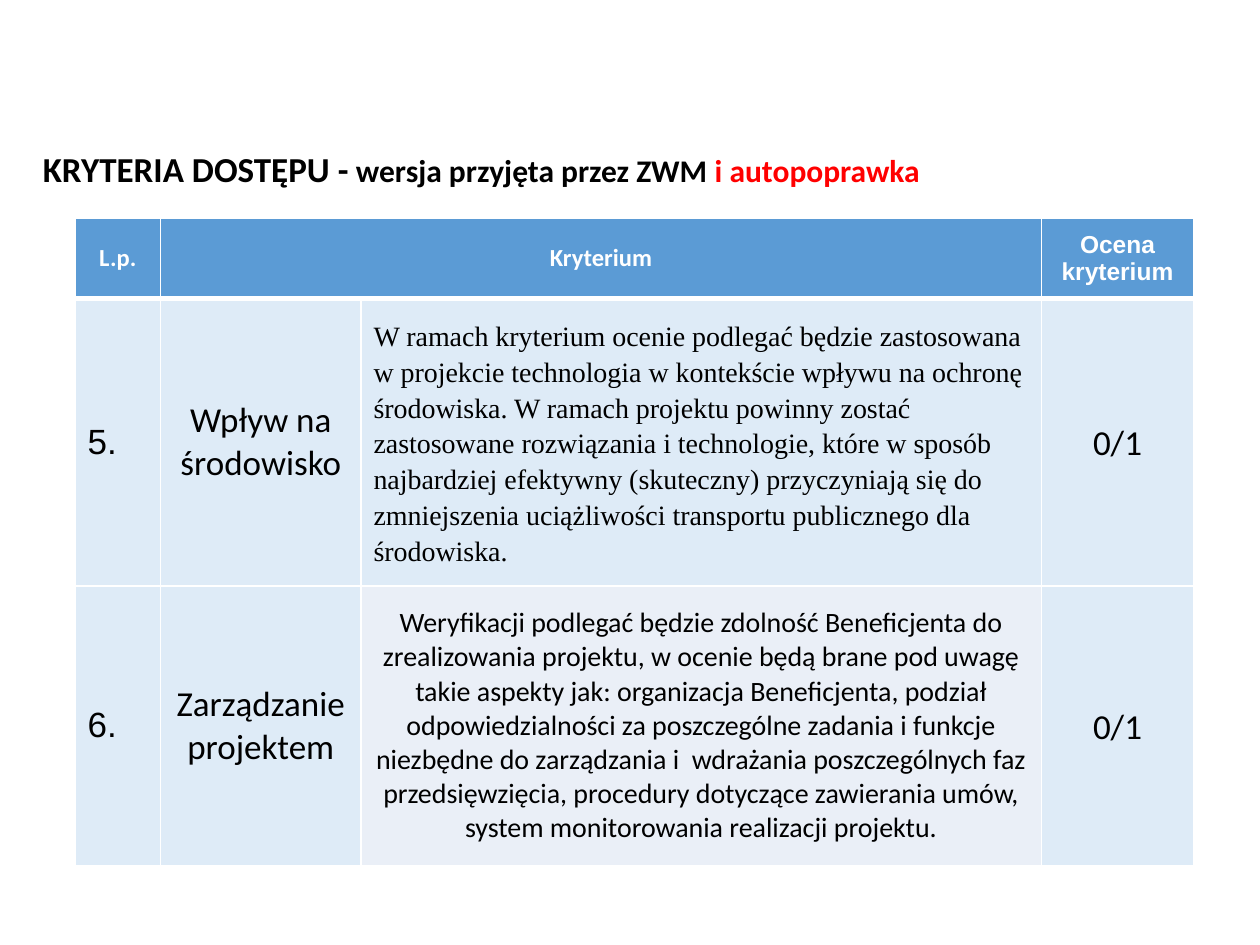
from lxml import etree
from pptx import Presentation
from pptx.dml.color import RGBColor
from pptx.enum.text import MSO_ANCHOR, MSO_AUTO_SIZE, PP_ALIGN
from pptx.oxml.ns import qn
from pptx.util import Inches, Pt

LEFT, CENTER = PP_ALIGN.LEFT, PP_ALIGN.CENTER
MIDDLE = MSO_ANCHOR.MIDDLE
FIT_SHAPE = MSO_AUTO_SIZE.SHAPE_TO_FIT_TEXT
TITLE_ONLY = 5
UNIT = 0.1  # grid step in inches: 100 columns by 75 rows
WHITE, BLACK, RED = "FFFFFF", "000000", "FF0000"
BLUE, PALE, PALER = "5B9BD5", "DEEBF7", "EAEFF7"
SANS, ARIAL, SERIF = "Calibri", "Arial", "Times New Roman"


def rgb(color):
    return RGBColor.from_string(color)


def grid(steps):
    return Inches(steps * UNIT)


class Deck:
    def __init__(self):
        self.prs = Presentation()
        self.prs.slide_width, self.prs.slide_height = grid(100), grid(75)
        self.s = self.prs.slides.add_slide(self.prs.slide_layouts[TITLE_ONLY])

    def style(self, r, size, color=BLACK, bold=False, font=SANS):
        r.font.name, r.font.size, r.font.bold = font, Pt(size), bold
        r.font.color.rgb = rgb(color)

    def title(self, x, y, w, h, runs):
        sp = self.s.shapes.title
        sp.left, sp.top, sp.width, sp.height = map(grid, (x, y, w, h))
        tf = sp.text_frame
        tf.word_wrap, tf.auto_size, tf.vertical_anchor = True, FIT_SHAPE, MIDDLE
        p = tf.paragraphs[0]
        p.alignment = LEFT
        for text, size, color in runs:
            r = p.add_run()
            r.text = text
            self.style(r, size, color, bold=True)

    def table(self, x, y, cols, rows):
        frame = self.s.shapes.add_table(len(rows), len(cols), grid(x), grid(y),
                                        grid(sum(cols)), grid(sum(rows)))
        table = frame.table
        for column, width in zip(table.columns, cols):
            column.width = grid(width)
        for row, height in zip(table.rows, rows):
            row.height = grid(height)
        return table

    def borders(self, cell, top=1, bottom=1):
        tcPr = cell._tc.get_or_add_tcPr()
        for side, width in (("L", 1), ("R", 1), ("T", top), ("B", bottom)):
            ln = etree.SubElement(tcPr, qn(f"a:ln{side}"), w=str(Pt(width)))
            fill = etree.SubElement(ln, qn("a:solidFill"))
            etree.SubElement(fill, qn("a:srgbClr"), val=WHITE)

    def cell(self, cell, text, fill, size, color=BLACK, bold=False, font=SANS,
             align=CENTER, spacing=None, margin=None):
        cell.fill.solid()
        cell.fill.fore_color.rgb = rgb(fill)
        cell.vertical_anchor = MIDDLE
        if margin is not None:
            cell.margin_left = cell.margin_right = Inches(margin)
            cell.margin_top = cell.margin_bottom = Inches(margin)
        p = cell.text_frame.paragraphs[0]
        p.text = text
        p.alignment, p.line_spacing = align, spacing
        self.style(p.runs[0], size, color, bold, font)


HEADERS = [(0, "L.p.", SANS), (1, "Kryterium", SANS), (3, "Ocena kryterium", ARIAL)]

# Number, criterion, description, description style, score
CRITERIA = [
    ("5.", "Wpływ na środowisko",
     "W ramach kryterium ocenie podlegać będzie zastosowana w projekcie "
     "technologia w kontekście wpływu na ochronę środowiska. W ramach projektu "
     "powinny zostać zastosowane rozwiązania i technologie, które w sposób "
     "najbardziej efektywny (skuteczny) przyczyniają się do zmniejszenia "
     "uciążliwości transportu publicznego dla środowiska.",
     dict(fill=PALE, font=SERIF, align=LEFT, spacing=1.15), "0/1"),
    ("6.", "Zarządzanie projektem",
     "Weryfikacji podlegać będzie zdolność Beneficjenta do zrealizowania "
     "projektu, w ocenie będą brane pod uwagę takie aspekty jak: organizacja "
     "Beneficjenta, podział odpowiedzialności za poszczególne zadania i funkcje "
     "niezbędne do zarządzania i  wdrażania poszczególnych faz przedsięwzięcia, "
     "procedury dotyczące zawierania umów, system monitorowania realizacji "
     "projektu.",
     dict(fill=PALER), "0/1"),
]


def main():
    deck = Deck()

    # Title
    deck.title(2.4, 10.5, 86.2, 5.7, [
        ("KRYTERIA DOSTĘPU -", 20, BLACK),
        (" wersja przyjęta przez ZWM ", 18, BLACK),
        ("i autopoprawka", 18, RED),
    ])

    # Table with a thick line under its header
    table = deck.table(5.95, 17.3, [6.8, 15.9, 54, 12.1], [6.4, 22.8, 22.2])
    for i, row in enumerate(table.rows):
        for cell in row.cells:
            deck.borders(cell, top=3 if i == 1 else 1, bottom=3 if i == 0 else 1)

    # Header row
    table.cell(0, 1).merge(table.cell(0, 2))
    for column, text, font in HEADERS:
        deck.cell(table.cell(0, column), text, BLUE, 14, WHITE, True, font)

    # Criteria rows
    for i, (number, name, description, look, score) in enumerate(CRITERIA, 1):
        deck.cell(table.cell(i, 0), number, PALE, 20, font=ARIAL, align=LEFT)
        deck.cell(table.cell(i, 1), name, PALE, 20)
        deck.cell(table.cell(i, 2), description, size=16, **look)
        deck.cell(table.cell(i, 3), score, PALE, 20, spacing=1.07, margin=0.04)

    deck.prs.save("out.pptx")


if __name__ == "__main__":
    main()
